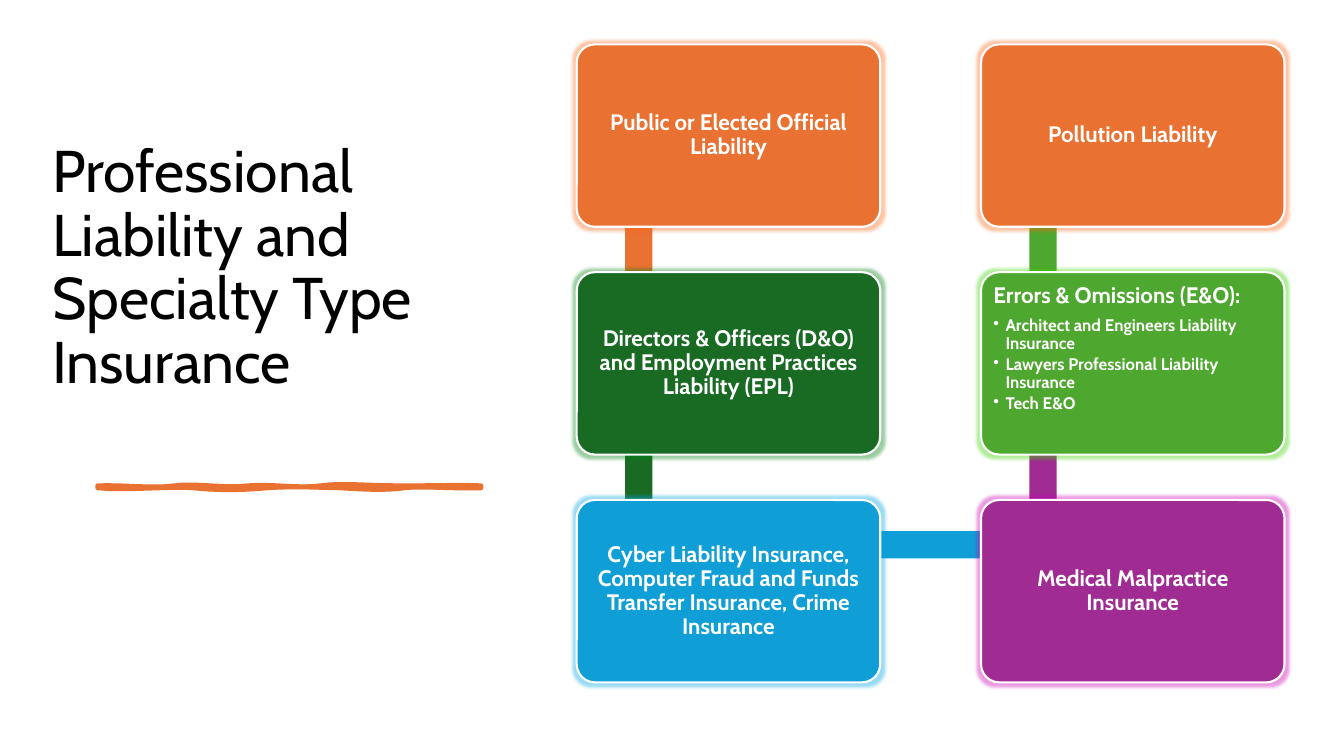
from lxml import etree
from pptx import Presentation, util as u
from pptx.dml.color import RGBColor
from pptx.enum import shapes, text
from pptx.oxml.ns import qn

PX = 9144  # 100 px to the inch
ORANGE, DARK_GREEN, GREEN = "E97132", "196B24", "4EA72E"
BLUE, PURPLE, WHITE, BLACK = "0F9ED5", "A02B93", "FFFFFF", "000000"


def rgb(value):
    return RGBColor.from_string(value)


def write(tf, content, size=16, color=WHITE, bold=True, align="CENTER", after=0, bullet=False):
    p = tf.paragraphs[-1]
    if p.runs:
        p = tf.add_paragraph()
    p.alignment = getattr(text.PP_ALIGN, align)
    p.line_spacing = 0.9
    p.space_after = u.Pt(after)
    r = p.add_run()
    r.text = content
    r.font.name, r.font.size, r.font.bold = "Cabin", u.Pt(size), bold
    r.font.color.rgb = rgb(color)
    if bullet:
        pPr = p._p.get_or_add_pPr()
        pPr.set("lvl", "1")
        pPr.set("marL", str(12 * PX))
        pPr.set("indent", str(-12 * PX))
        etree.SubElement(pPr, qn("a:buChar")).set("char", "•")


prs = Presentation()
prs.slide_width, prs.slide_height = 1333 * PX, 750 * PX
s = prs.slides.add_slide(prs.slide_layouts[6])

# Title, held above the bottom of its box by the inset
title = s.shapes.add_textbox(42 * PX, 72 * PX, 511 * PX, 390 * PX)
tf = title.text_frame
tf.word_wrap = True
tf.vertical_anchor = text.MSO_ANCHOR.BOTTOM
tf.margin_bottom = 69 * PX
write(tf, "Professional Liability and Specialty Type Insurance",
      size=42, color=BLACK, bold=False, align="LEFT")

# Hand-drawn rule: curves as two control points and an end point
start = (97, 482)
curves = [
    ((122, 481), (152, 485), (173, 482)), ((195, 479), (221, 485), (246, 482)),
    ((270, 480), (296, 485), (318, 482)), ((339, 479), (360, 482), (401, 482)),
    ((443, 482), (457, 481), (477, 482)), ((477, 483), (477, 483), (477, 484)),
    ((451, 485), (419, 482), (401, 484)), ((383, 487), (353, 485), (337, 484)),
    ((320, 484), (296, 482), (265, 484)), ((233, 487), (211, 486), (192, 484)),
    ((173, 482), (123, 487), (97, 484)), ((97, 483), (97, 483), (97, 482)),
]
STEPS = 8
points, a = [], start
for b, c, d in curves:
    for t in (i / STEPS for i in range(1, STEPS + 1)):
        weights = ((1 - t) ** 3, 3 * t * (1 - t) ** 2, 3 * t * t * (1 - t), t ** 3)
        points.append(tuple(PX * sum(w * q[axis] for w, q in zip(weights, (a, b, c, d)))
                            for axis in (0, 1)))
    a = d
outline = s.shapes.build_freeform(start[0] * PX, start[1] * PX)
outline.add_line_segments(points)
rule = outline.convert_to_shape()
rule.shadow.inherit = False
rule.fill.solid()
rule.fill.fore_color.rgb = rgb(ORANGE)
rule.line.color.rgb = rgb(ORANGE)
rule.line.width = u.Pt(3.5)

# Grid of boxes
COLS, ROWS = (572, 973), (44, 270, 496)
BOX_W, BOX_H, BAR = 301, 181, 27

# Bars that link the boxes, behind them
bars = [(COLS[c] + 48, ROWS[r] + 46, BAR, 224, color) for c, r, color in
        ((0, 0, ORANGE), (0, 1, DARK_GREEN), (1, 1, PURPLE), (1, 0, GREEN))]
bars.append((634, 527, 399, BAR, BLUE))
for x, y, w, h, color in bars:
    bar = s.shapes.add_shape(shapes.MSO_SHAPE.RECTANGLE, x * PX, y * PX, w * PX, h * PX)
    bar.shadow.inherit = False
    bar.fill.solid()
    bar.fill.fore_color.rgb = rgb(color)
    bar.line.fill.background()

# Boxes: column, row, colour, heading, bullets
boxes = [
    (0, 0, ORANGE, "Public or Elected Official Liability", []),
    (0, 1, DARK_GREEN, "Directors & Officers (D&O) and Employment Practices Liability (EPL)", []),
    (0, 2, BLUE, "Cyber Liability Insurance, Computer Fraud and Funds Transfer Insurance, "
                 "Crime Insurance", []),
    (1, 2, PURPLE, "Medical Malpractice Insurance", []),
    (1, 1, GREEN, "Errors & Omissions (E&O):",
     ["Architect and Engineers Liability Insurance",
      "Lawyers Professional Liability Insurance", "Tech E&O"]),
    (1, 0, ORANGE, "Pollution Liability", []),
]
for col, row, color, heading, bullets in boxes:
    sp = s.shapes.add_shape(shapes.MSO_SHAPE.ROUNDED_RECTANGLE,
                            COLS[col] * PX, ROWS[row] * PX, BOX_W * PX, BOX_H * PX)
    sp.adjustments[0] = 0.1
    sp.fill.solid()
    sp.fill.fore_color.rgb = rgb(color)
    sp.line.color.rgb = rgb(WHITE)
    sp.line.width = u.Pt(1.5)

    # Soft glow in the box's own colour
    sp.shadow.inherit = False
    effects = sp._element.spPr.find(qn("a:effectLst"))
    glow = etree.SubElement(effects, qn("a:glow"), rad="63500")
    tint = etree.SubElement(glow, qn("a:srgbClr"), val=color)
    etree.SubElement(tint, qn("a:satMod"), val="175000")
    etree.SubElement(tint, qn("a:alpha"), val="40000")

    tf = sp.text_frame
    tf.word_wrap = True
    tf.margin_left = tf.margin_right = tf.margin_top = tf.margin_bottom = 7 * PX
    tf.vertical_anchor = text.MSO_ANCHOR.TOP if bullets else text.MSO_ANCHOR.MIDDLE
    write(tf, heading, align="LEFT" if bullets else "CENTER", after=6 if bullets else 0)
    for item in bullets:
        write(tf, item, size=12, align="LEFT", after=2, bullet=True)

prs.save("out.pptx")
